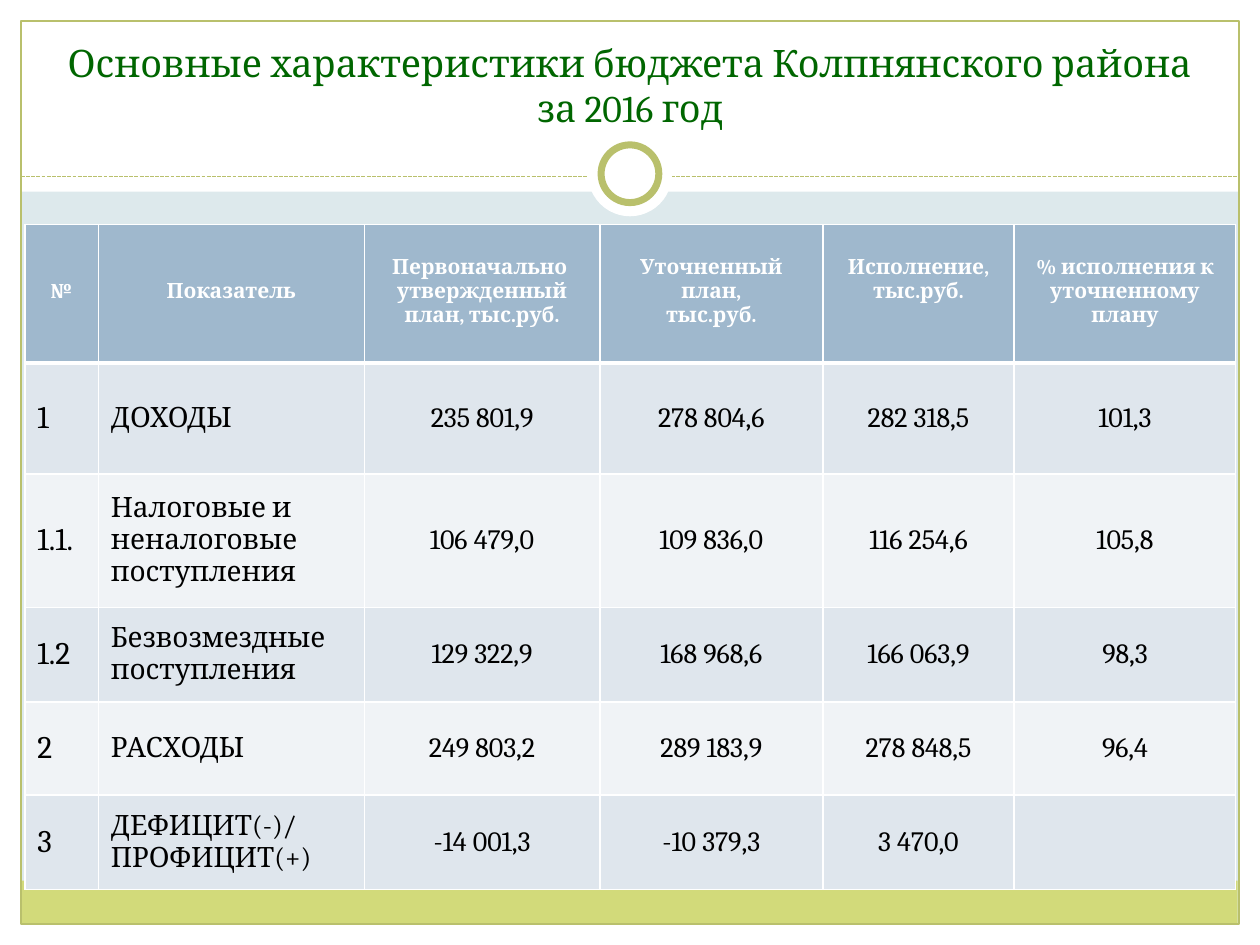
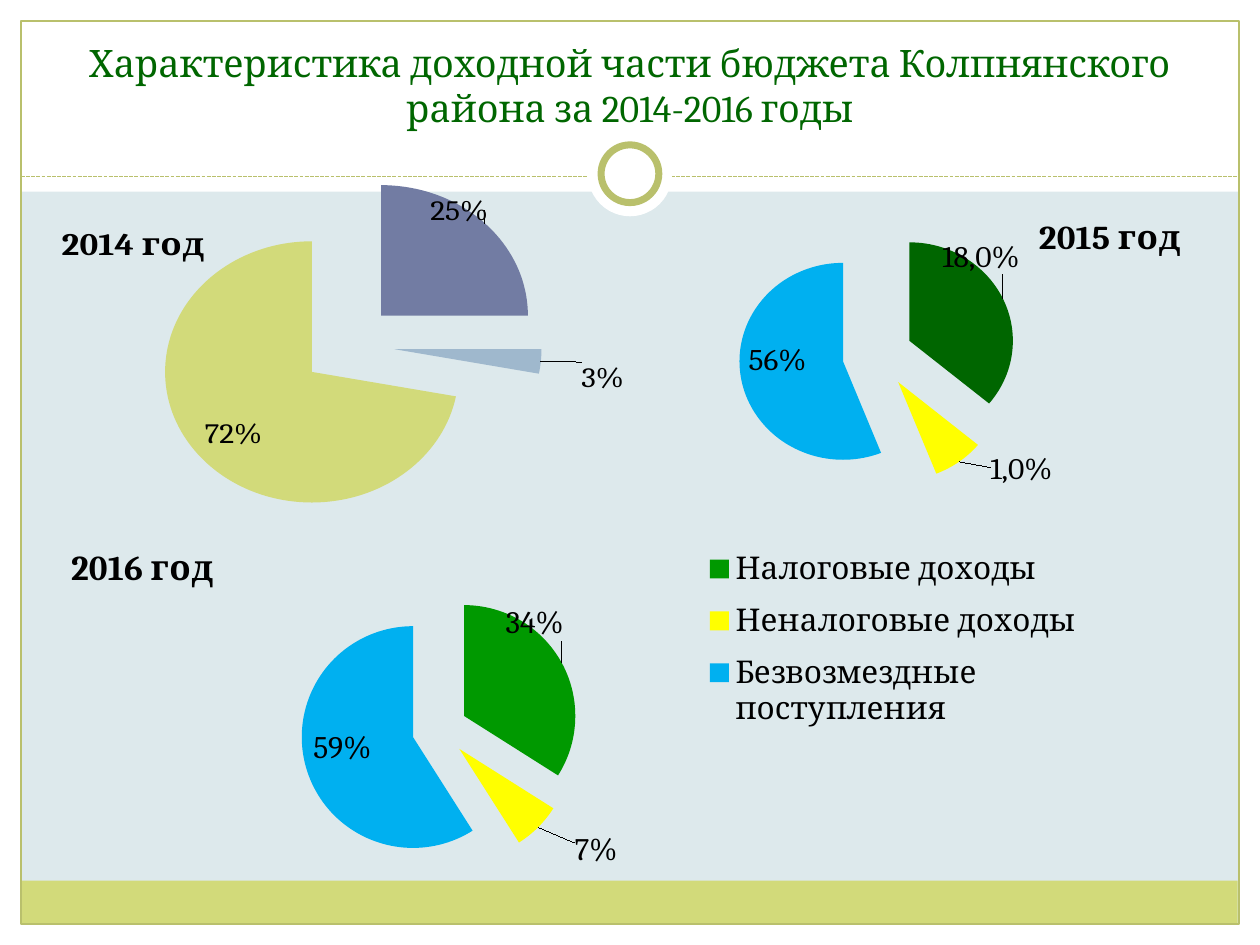
from lxml.etree import SubElement
from pptx import Presentation
from pptx.chart.data import CategoryChartData
from pptx.dml.color import RGBColor as Rgb
from pptx.enum.chart import XL_CHART_TYPE as ChartType
from pptx.enum.chart import XL_LABEL_POSITION as LabelPosition
from pptx.enum.chart import XL_LEGEND_POSITION as LegendPosition
from pptx.enum.dml import MSO_LINE_DASH_STYLE as Dash
from pptx.enum.shapes import MSO_CONNECTOR as Connector
from pptx.enum.shapes import MSO_SHAPE as Shape
from pptx.enum.text import MSO_ANCHOR as Anchor
from pptx.enum.text import PP_ALIGN as Align
from pptx.oxml.ns import qn
from pptx.util import Pt

COLORS = {
    "background": "DDE9EC", "white": "FFFFFF", "black": "000000",
    "olive": "B9C06C", "lime": "D2DA7A", "title": "006600",
    "header": "9FB8CD", "odd": "DFE6ED", "even": "F0F3F6",
    "violet": "727CA3", "green": "009900", "yellow": "FFFF00", "sky": "00B0F0",
}
COLORS = {name: Rgb.from_string(value) for name, value in COLORS.items()}
FONT = "Cambria"


def write(frame, lines, size, color, align, bold=False):
    for number, line in enumerate(lines):
        paragraph = frame.add_paragraph() if number else frame.paragraphs[0]
        paragraph.alignment = align
        run = paragraph.add_run()
        run.text = line
        for name, value in {"name": FONT, "size": Pt(size), "bold": bold}.items():
            setattr(run.font, name, value)
        run.font.color.rgb = COLORS[color]


def place(parent, index, settings):
    for old in parent.findall(qn("c:layout")):
        parent.remove(old)
    layout = parent.makeelement(qn("c:layout"))
    parent.insert(index, layout)
    manual = SubElement(layout, qn("c:manualLayout"))
    for name, value in settings.items():
        SubElement(manual, qn("c:" + name)).set("val", str(value))


presentation = Presentation()
presentation.slide_width = Pt(720)
presentation.slide_height = Pt(540)

BANDS = [
    (Shape.RECTANGLE, (0, 528, 720, 12), "white", None),
    (Shape.RECTANGLE, (0, 0, 720, 109.5), "white", None),
    (Shape.RECTANGLE, (0, 0, 12, 540), "white", None),
    (Shape.RECTANGLE, (708, 0, 12, 540), "white", None),
    (Shape.RECTANGLE, (11.75, 503.25, 695.5, 24.5), "lime", None),
    (Shape.RECTANGLE, (12, 12, 696, 516), None, 0.75),
    (Shape.OVAL, (336, 75.6, 48, 48), "white", None),
    (Shape.OVAL, (343.5, 82.8, 33, 33), "white", 4),
]
TITLES = [
    "Основные характеристики бюджета Колпнянского района за 2016 год",
    "Характеристика доходной части бюджета Колпнянского района за 2014-2016 годы",
]

for title in TITLES:
    slide = presentation.slides.add_slide(presentation.slide_layouts[6])
    slide.background.fill.solid()
    slide.background.fill.fore_color.rgb = COLORS["background"]
    for kind, box, fill, line_width in BANDS:
        if box == BANDS[6][1]:
            divider = slide.shapes.add_connector(
                Connector.STRAIGHT, Pt(12), Pt(100.8), Pt(708), Pt(100.8))
            divider.line.color.rgb = COLORS["olive"]
            divider.line.width = Pt(0.75)
            divider.line.dash_style = Dash.SQUARE_DOT
            SubElement(divider.element.spPr, qn("a:effectLst"))
        shape = slide.shapes.add_shape(kind, *map(Pt, box))
        shape.shadow.inherit = False
        if fill:
            shape.fill.solid()
            shape.fill.fore_color.rgb = COLORS[fill]
        else:
            shape.fill.background()
        if line_width:
            shape.line.color.rgb = COLORS["olive"]
            shape.line.width = Pt(line_width)
        else:
            shape.line.fill.background()
    title_frame = slide.shapes.add_textbox(Pt(24), Pt(18), Pt(672), Pt(60)).text_frame
    title_frame.word_wrap = True
    title_frame.vertical_anchor = Anchor.BOTTOM
    write(title_frame, [title], 21.6, "title", Align.CENTER)

budget_slide, income_slide = presentation.slides

COLUMN_WIDTHS = [42, 152, 134.6, 127.4, 109.4, 126.6]
ROW_HEIGHTS = [79.2, 63.4, 76.3, 54, 53.3, 54]
BUDGET = [
    ["№", "Показатель", "Первоначально \nутвержденный\nплан, тыс.руб.",
     "Уточненный\nплан,\nтыс.руб.", "Исполнение, тыс.руб.",
     "% исполнения к\nуточненному\nплану"],
    ["1", "ДОХОДЫ", "235 801,9", "278 804,6", "282 318,5", "101,3"],
    ["1.1.", "Налоговые и неналоговые\nпоступления",
     "106 479,0", "109 836,0", "116 254,6", "105,8"],
    ["1.2", "Безвозмездные поступления",
     "129 322,9", "168 968,6", "166 063,9", "98,3"],
    ["2", "РАСХОДЫ", "249 803,2", "289 183,9", "278 848,5", "96,4"],
    ["3", "ДЕФИЦИТ(-)/\nПРОФИЦИТ(+)", "-14 001,3", "-10 379,3", "3 470,0", ""],
]

table = budget_slide.shapes.add_table(
    len(BUDGET), len(COLUMN_WIDTHS), Pt(14.2), Pt(128.2),
    Pt(sum(COLUMN_WIDTHS)), Pt(sum(ROW_HEIGHTS))).table
for column, width in zip(table.columns, COLUMN_WIDTHS):
    column.width = Pt(width)
for row, height in zip(table.rows, ROW_HEIGHTS):
    row.height = Pt(height)
for row_number, texts in enumerate(BUDGET):
    is_header = row_number == 0
    fill = "header" if is_header else ("even", "odd")[row_number % 2]
    for column_number, text in enumerate(texts):
        cell = table.cell(row_number, column_number)
        properties = cell._tc.get_or_add_tcPr()
        for side in "LRTB":
            thick = (is_header and side == "B") or (row_number == 1 and side == "T")
            border = SubElement(properties, qn("a:ln" + side), w=str(Pt(3 if thick else 1)))
            solid = SubElement(border, qn("a:solidFill"))
            SubElement(solid, qn("a:srgbClr"), val=str(COLORS["white"]))
        cell.fill.solid()
        cell.fill.fore_color.rgb = COLORS[fill]
        if is_header:
            cell.vertical_anchor = Anchor.TOP
            cell.margin_top = Pt(31.6 if column_number < 2 else 17.6)
            write(cell.text_frame, text.split("\n"), 12, "white", Align.CENTER, True)
        else:
            cell.vertical_anchor = Anchor.MIDDLE
            align = Align.LEFT if column_number < 2 else Align.CENTER
            size = 18 if column_number == 0 else 16
            write(cell.text_frame, text.split("\n"), size, "black", align)

NUMBERS = ["1", "2", "3"]
SOURCES = ["Налоговые доходы", "Неналоговые доходы", "Безвозмездные поступления"]
PIES = [
    {"name": "2014 год", "box": (20.2, 105.8, 380.2, 181.4), "categories": NUMBERS,
     "values": (25, 3, 72), "colors": ("violet", "header", "lime"),
     "explosion": 1, "slice_explosion": 32, "title": (0.03, 0.08),
     "plot": (0, 0.065, 0.94, 0.934), "shifts": ((-0.09, -0.03), (0.05, 0)),
     "labels": (None, None)},
    {"name": "2015 год", "box": (308.9, 105.8, 385.2, 181.4), "categories": NUMBERS,
     "values": (36, 8, 56), "colors": ("title", "yellow", "sky"),
     "explosion": 34, "slice_explosion": 34, "title": (0.73, 0.08),
     "plot": (0, 0.126, 1, 0.874), "shifts": ((-0.1, -0.07), (0.04, 0)),
     "labels": ("18,0%", "1,0%")},
    {"name": "2016 год", "box": (31, 298, 595.4, 198.7), "categories": SOURCES,
     "values": (34, 7, 59), "colors": ("green", "yellow", "sky"),
     "explosion": 25, "slice_explosion": 25, "title": (0.01, 0.05),
     "plot": (0, 0.2, 0.74, 0.8), "shifts": ((-0.06, -0.05), (0.03, 0.03)),
     "labels": (None, None), "legend": (0.62, 0.04, 0.37, 0.6)},
]
EDGES = {"xMode": "edge", "yMode": "edge"}

for pie in PIES:
    data = CategoryChartData()
    data.categories = pie["categories"]
    data.add_series(pie["name"], pie["values"])
    chart = income_slide.shapes.add_chart(
        ChartType.PIE, *map(Pt, pie["box"]), data).chart
    for name, value in {"name": FONT, "size": Pt(18)}.items():
        setattr(chart.font, name, value)
    chart.font.color.rgb = COLORS["black"]
    chart.has_title = True
    write(chart.chart_title.text_frame, [pie["name"]], 20, "black", Align.CENTER, True)
    place(chart.element.xpath(".//c:title")[0], 1, EDGES | dict(zip("xy", pie["title"])))
    place(chart.element.xpath(".//c:plotArea")[0], 0,
          {"layoutTarget": "inner"} | EDGES | dict(zip("xywh", pie["plot"])))
    chart.has_legend = "legend" in pie
    if chart.has_legend:
        chart.legend.position = LegendPosition.RIGHT
        chart.legend.include_in_layout = False
        place(chart.element.xpath(".//c:legend")[0], 1,
              EDGES | dict(zip("xywh", pie["legend"])))

    plot = chart.plots[0]
    plot.vary_by_categories = True
    series = plot.series[0]
    for number, color in enumerate(pie["colors"]):
        slice_format = series.points[number].format
        slice_format.fill.solid()
        slice_format.fill.fore_color.rgb = COLORS[color]
        slice_format.line.fill.background()
    for properties in chart.element.xpath(".//c:dPt/c:spPr"):
        explosion = properties.makeelement(qn("c:explosion"))
        explosion.set("val", str(pie["slice_explosion"]))
        properties.addprevious(explosion)
    series_text = chart.element.xpath(".//c:ser/c:tx")[0]
    explosion = series_text.makeelement(qn("c:explosion"))
    explosion.set("val", str(pie["explosion"]))
    series_text.addnext(explosion)

    label_format = {"show_percentage": True, "show_value": False, "number_format": "0%",
                    "number_format_is_linked": False, "position": LabelPosition.INSIDE_END}
    for name, value in label_format.items():
        setattr(series.data_labels, name, value)
    for number, text in enumerate(pie["labels"]):
        label = series.points[number].data_label
        label.position = LabelPosition.OUTSIDE_END
        if text:
            write(label.text_frame, [text], 18, "black", Align.CENTER)
    for label, shift in zip(chart.element.xpath(".//c:dLbl"), pie["shifts"]):
        place(label, 1, dict(zip("xy", shift)))
        label.find(qn("c:showVal")).set("val", "0")
        label.find(qn("c:showPercent")).set("val", "1")

presentation.save("out.pptx")
